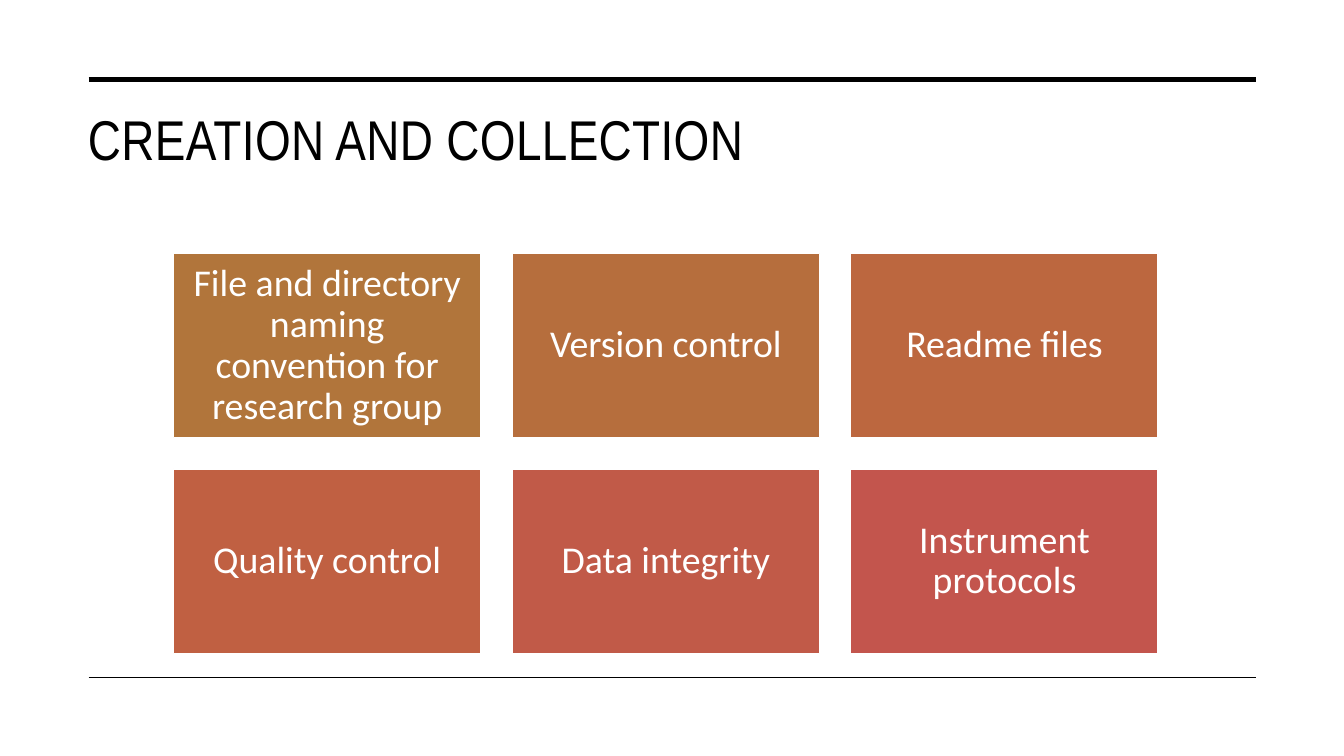
from typing import NamedTuple

from pptx import Presentation
from pptx.dml.color import RGBColor
from pptx.enum import shapes, text
from pptx.oxml import xmlchemy
from pptx.util import Pt

BLACK = RGBColor(0x00, 0x00, 0x00)
WHITE = RGBColor(0xFF, 0xFF, 0xFF)
OCHRE = RGBColor(0xB1, 0x75, 0x3B)
AMBER = RGBColor(0xB6, 0x6E, 0x3D)
COPPER = RGBColor(0xBC, 0x67, 0x3F)
RUST = RGBColor(0xC0, 0x60, 0x42)
BRICK = RGBColor(0xC1, 0x5A, 0x48)
CORAL = RGBColor(0xC3, 0x55, 0x4D)


class Practice(NamedTuple):
    label: str
    fill: RGBColor


class Rule(NamedTuple):
    y: float
    weight: float


PRACTICES = [
    Practice("File and directory naming convention for research group", OCHRE),
    Practice("Version control", AMBER),
    Practice("Readme files", COPPER),
    Practice("Quality control", RUST),
    Practice("Data integrity", BRICK),
    Practice("Instrument protocols", CORAL),
]
RULES = [Rule(56.9, 3.5), Rule(483.8, 1)]
RULE_LEFT, RULE_RIGHT = 63.4, 897.1

# Grid of practices, in points
COLUMNS = 3
GRID_LEFT, GRID_TOP = 123.9, 180.9
CARD_WIDTH, CARD_HEIGHT, GAP = 219.6, 131.8, 22.3


def write_text(shape, words: str, *, font: str, size: float, color: RGBColor,
               align=text.PP_ALIGN.LEFT, anchor=text.MSO_ANCHOR.TOP,
               inset: tuple[float, float] = (7.2, 3.6),
               line_spacing: float = 0.9, tracking: int = 0) -> None:
    """Fill a shape with one formatted paragraph; tracking is in 1/100 pt."""
    frame = shape.text_frame
    frame.word_wrap = True
    frame.auto_size = text.MSO_AUTO_SIZE.NONE
    frame.vertical_anchor = anchor
    frame.margin_left = frame.margin_right = Pt(inset[0])
    frame.margin_top = frame.margin_bottom = Pt(inset[1])
    paragraph = frame.paragraphs[0]
    paragraph.alignment = align
    paragraph.line_spacing = line_spacing
    run = paragraph.add_run()
    run.text = words
    run.font.name = font
    run.font.size = Pt(size)
    run.font.color.rgb = color
    if tracking:
        run.font._element.set("spc", str(tracking))


def draw_rule(slide, rule: Rule) -> None:
    line = slide.shapes.add_connector(
        shapes.MSO_CONNECTOR.STRAIGHT,
        Pt(RULE_LEFT), Pt(rule.y), Pt(RULE_RIGHT), Pt(rule.y))
    line.line.color.rgb = BLACK
    line.line.width = Pt(rule.weight)
    line._element.spPr.append(xmlchemy.OxmlElement("a:effectLst"))


def draw_practice(slide, index: int, practice: Practice) -> None:
    row, column = divmod(index, COLUMNS)
    card = slide.shapes.add_shape(
        shapes.MSO_SHAPE.RECTANGLE,
        Pt(GRID_LEFT + column * (CARD_WIDTH + GAP)),
        Pt(GRID_TOP + row * (CARD_HEIGHT + GAP)),
        Pt(CARD_WIDTH), Pt(CARD_HEIGHT))
    card.shadow.inherit = False
    card.fill.solid()
    card.fill.fore_color.rgb = practice.fill
    card.line.color.rgb = WHITE
    card.line.width = Pt(1)
    write_text(card, practice.label, font="Calibri", size=27, color=WHITE,
               align=text.PP_ALIGN.CENTER, anchor=text.MSO_ANCHOR.MIDDLE,
               inset=(8, 8))


def main() -> None:
    deck = Presentation()
    deck.slide_width, deck.slide_height = Pt(960), Pt(540)
    slide = deck.slides.add_slide(deck.slide_layouts.get_by_name("Title Only"))

    # Title
    title = slide.shapes.title
    title.left, title.top = Pt(55.6), Pt(71.3)
    title.width, title.height = Pt(841.7), Pt(90.7)
    write_text(title, "CREATION AND COLLECTION", font="Arial Narrow", size=40,
               color=BLACK, line_spacing=1.0, tracking=30)

    # Rules above and below the content
    for rule in RULES:
        draw_rule(slide, rule)

    # Practices
    for index, practice in enumerate(PRACTICES):
        draw_practice(slide, index, practice)

    deck.save("out.pptx")


if __name__ == "__main__":
    main()
